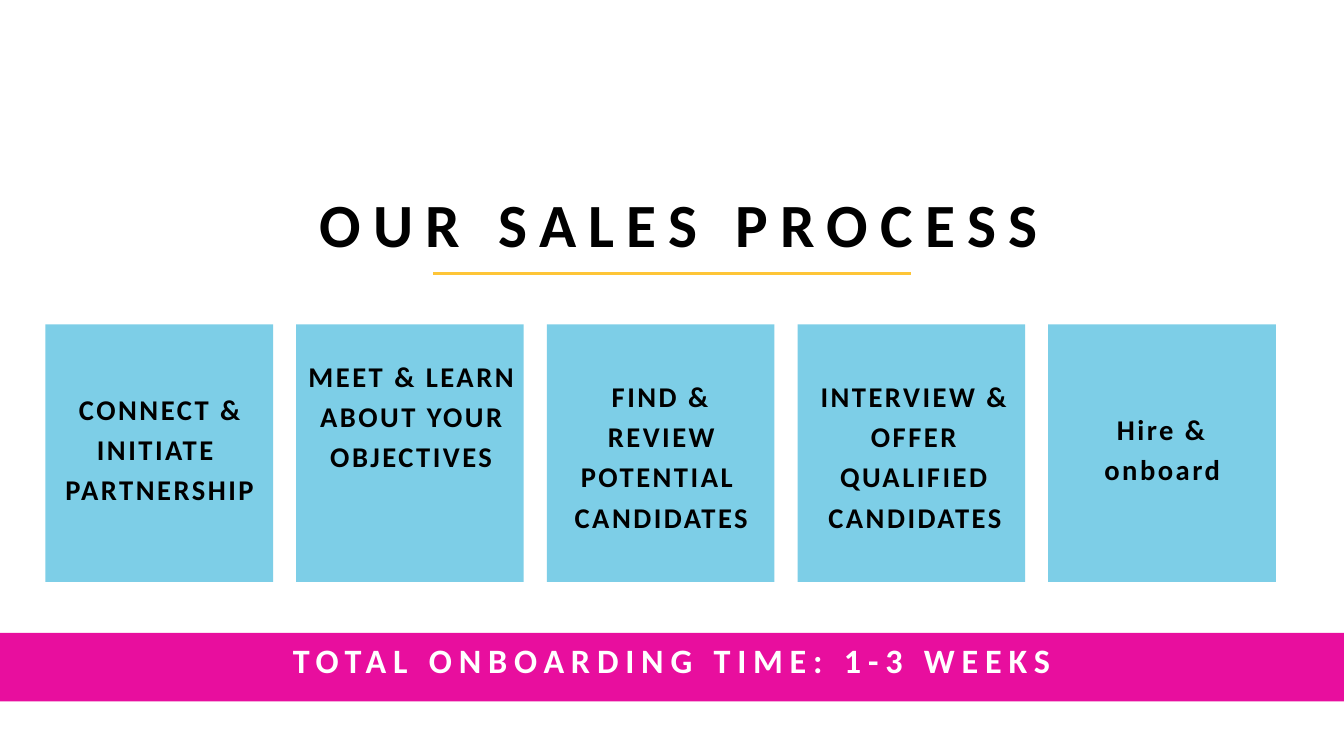
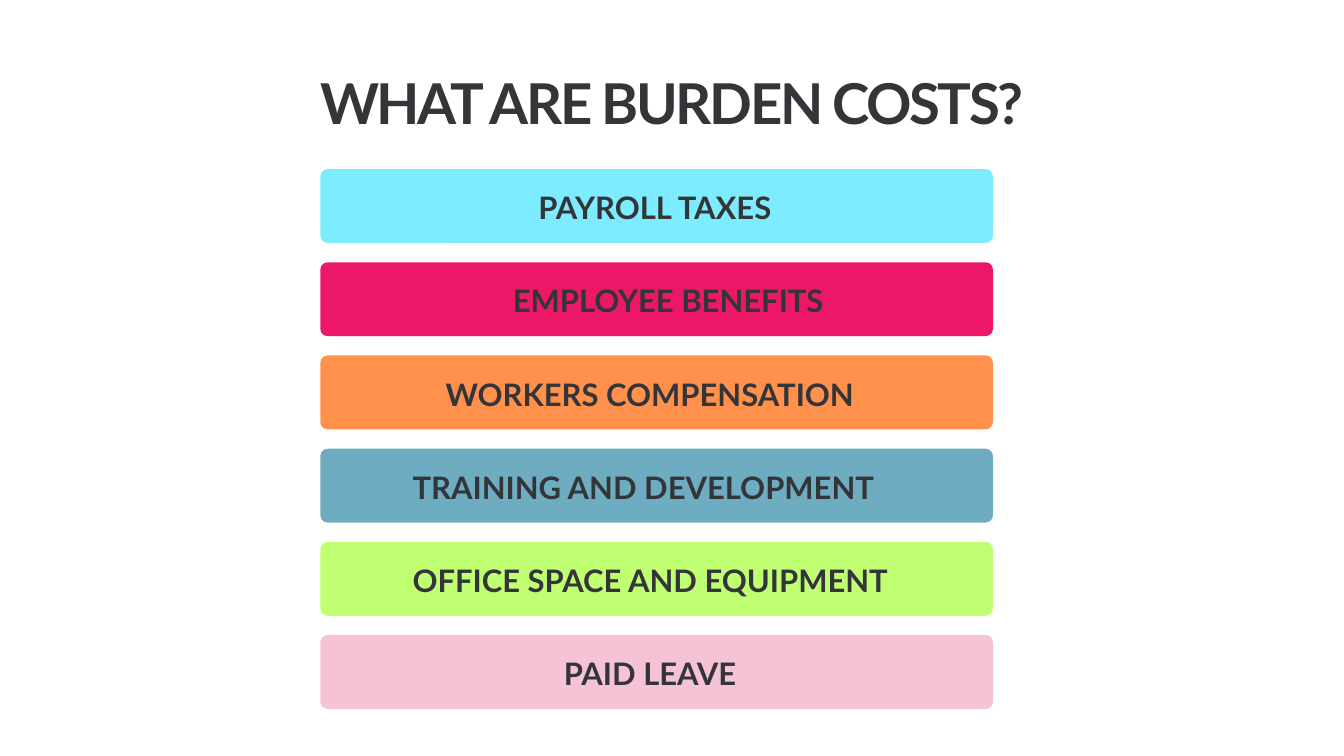
from dataclasses import dataclass

from lxml.etree import SubElement
from pptx import Presentation
from pptx.dml.color import RGBColor
from pptx.enum.shapes import MSO_CONNECTOR as Connector, MSO_SHAPE as Shape
from pptx.enum.text import MSO_ANCHOR as Anchor, MSO_AUTO_SIZE as AutoSize, PP_ALIGN as Align
from pptx.oxml.ns import qn
from pptx.util import Pt

# Content: card lines, then the text box (left, top, width, height)
PROCESS_TITLE = "OUR SALES PROCESS "
STEPS = [
    (["CONNECT &", "INITIATE ", "PARTNERSHIP"], (52.6, 414, 236.9, 126.7)),
    (["MEET & LEARN", "ABOUT YOUR", "OBJECTIVES"], (329, 378, 223.2, 212.4)),
    (["FIND & REVIEW", "POTENTIAL ", "CANDIDATES"], (596.9, 400.3, 223.2, 169.2)),
    (["INTERVIEW & OFFER QUALIFIED CANDIDATES"], (861.8, 400.3, 236.9, 169.2)),
    (["Hire & onboard"], (1148.4, 435.6, 193.7, 83.5)),
]
ONBOARDING = "TOTAL ONBOARDING TIME: 1-3 WEEKS"

COSTS_TITLE = "WHAT ARE BURDEN COSTS?"
# Label, bar colour, label left, alignment
COSTS = [
    ("PAYROLL TAXES", "7DECFF", 414, Align.CENTER),
    ("EMPLOYEE BENEFITS", "ED1768", 428.4, Align.CENTER),
    ("WORKERS COMPENSATION", "FF914D", 477.4, Align.LEFT),
    ("TRAINING AND DEVELOPMENT", "6EADC1", 442.1, Align.LEFT),
    ("OFFICE SPACE AND EQUIPMENT", "C1FF72", 442.1, Align.LEFT),
    ("PAID LEAVE", "F6C2D6", 604.1, Align.LEFT),
]


@dataclass(frozen=True)
class TextStyle:
    font: str
    size: float
    color: str
    leading: float
    tracking: float = 0


class Theme:
    card = "7DCEE7"
    band = "E80E9E"
    rule = "FEC537"
    process_title = TextStyle("Calibri", 65.8, "000000", 92.2, 13.2)
    step = TextStyle("Calibri", 30.6, "000000", 42.9, 2.7)
    band_text = TextStyle("Calibri", 36.6, "FFFFFF", 51.3, 7.3)
    costs_title = TextStyle("Lato", 60.3, "343539", 84.5, -2.5)
    cost = TextStyle("Lato", 33.2, "343539", 46.5)


def points(box):
    return [Pt(length) for length in box]


def add_block(slide, kind, box, color):
    shape = slide.shapes.add_shape(kind, *points(box))
    shape.shadow.inherit = False
    shape.fill.solid()
    shape.fill.fore_color.rgb = RGBColor.from_string(color)
    shape.line.fill.background()
    return shape


def add_text(slide, box, lines, style, align=Align.CENTER, inset=0,
             anchor=Anchor.TOP, auto_size=AutoSize.SHAPE_TO_FIT_TEXT):
    frame = slide.shapes.add_textbox(*points(box)).text_frame
    frame_format = {"word_wrap": True, "vertical_anchor": anchor, "auto_size": auto_size}
    for side in ("left", "top", "right", "bottom"):
        frame_format[f"margin_{side}"] = Pt(inset)
    for name, value in frame_format.items():
        setattr(frame, name, value)
    frame.text = "\n".join(lines)
    for paragraph in frame.paragraphs:
        paragraph.alignment = align
        paragraph.line_spacing = Pt(style.leading)
        font = paragraph.runs[0].font
        for name, value in {"name": style.font, "size": Pt(style.size), "bold": True}.items():
            setattr(font, name, value)
        font.color.rgb = RGBColor.from_string(style.color)
        if style.tracking:
            paragraph.runs[0]._r.get_or_add_rPr().set("spc", str(round(style.tracking * 100)))


def add_rule(slide, left, right, y):
    line = slide.shapes.add_connector(Connector.STRAIGHT, *points((left, y, right, y)))
    line.line.color.rgb = RGBColor.from_string(Theme.rule)
    line.line.width = Pt(3)
    SubElement(line._element.spPr, qn("a:effectLst"))


def build_process(slide):
    # Step cards
    left, pitch = 48.7, 268.6
    for index, (lines, text_box) in enumerate(STEPS):
        add_block(slide, Shape.RECTANGLE, (left + index * pitch, 347.5, 243.9, 276), Theme.card)
        add_text(slide, text_box, lines, Theme.step)

    # Title and rule
    add_text(slide, (294.5, 185.8, 894.2, 88.6), [PROCESS_TITLE], Theme.process_title)
    add_rule(slide, 464.4, 975.6, 293)

    # Full-width band
    band_left, band_width, band_bottom = -35, 1510, 751.5
    band_height, text_height = 73.3, 96.5
    add_block(slide, Shape.RECTANGLE,
              (band_left, band_bottom - band_height, band_width, band_height), Theme.band)
    add_text(slide, (band_left, band_bottom - text_height, band_width, text_height),
             [ONBOARDING], Theme.band_text, inset=4, anchor=Anchor.MIDDLE,
             auto_size=AutoSize.NONE)


def build_costs(slide):
    add_text(slide, (268.6, 60.5, 902.9, 79.9), [COSTS_TITLE], Theme.costs_title)

    # One rounded bar and label per cost
    first_top, pitch = 181.2, 99.85
    for index, (label, color, label_left, align) in enumerate(COSTS):
        top = first_top + index * pitch
        bar = add_block(slide, Shape.ROUNDED_RECTANGLE, (343.2, top, 720.8, 79.2), color)
        bar.adjustments[0] = 0.1
        add_text(slide, (label_left, top + 14.3, 575.3, 45.4), [label], Theme.cost, align)


def main():
    presentation = Presentation()
    presentation.slide_width, presentation.slide_height = Pt(1440), Pt(810)
    blank = presentation.slide_layouts[6]
    for build in (build_process, build_costs):
        build(presentation.slides.add_slide(blank))
    presentation.save("out.pptx")


if __name__ == "__main__":
    main()
